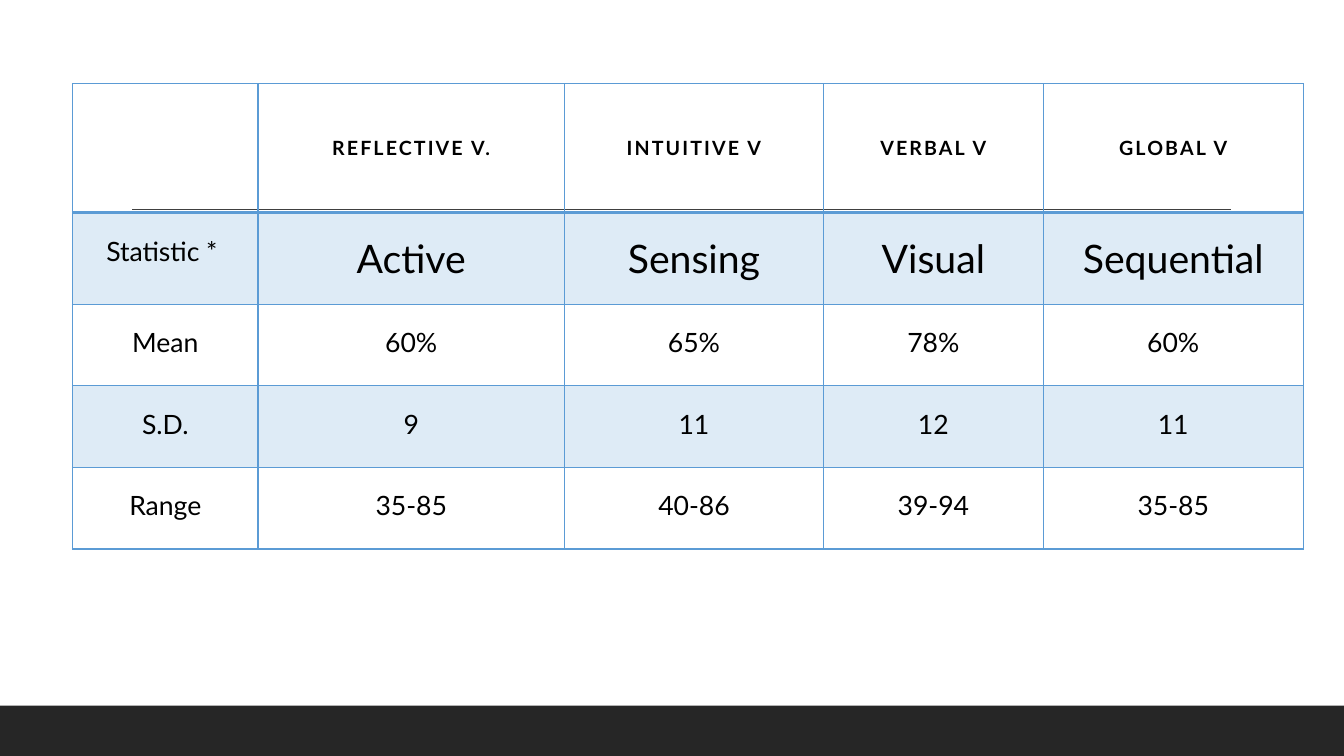
from lxml.etree import SubElement
from pptx import Presentation
from pptx.dml.color import RGBColor as RGB
from pptx.enum.shapes import MSO_CONNECTOR as LINE, MSO_SHAPE as SHAPE
from pptx.enum.text import MSO_ANCHOR as ANCHOR, PP_ALIGN as ALIGN
from pptx.oxml.ns import qn
from pptx.util import Inches, Pt

BLACK = RGB(0x00, 0x00, 0x00)
CHARCOAL = RGB(0x26, 0x26, 0x26)
GRAY = RGB(0x40, 0x40, 0x40)
BLUE = RGB(0x5B, 0x9B, 0xD5)

HEADER = {"size": Pt(14), "bold": True}
STYLE = {"size": Pt(28), "bold": False}
FIGURE = {"size": Pt(19), "bold": False}

COL_WIDTHS = [13.8, 22.8, 19.28, 16.35, 19.35]
ROW_HEIGHTS = [17.07] + [10.8] * 4
ROWS = [
    ["", "REFLECTIVE V.", "INTUITIVE V", "VERBAL V", "GLOBAL V"],
    ["Statistic * ", "Active", "Sensing", "Visual", "Sequential"],
    ["Mean", "60%", "65%", "78%", "60%"],
    ["S.D.", "9", "11", "12", "11"],
    ["Range", "35-85", "40-86", "39-94", "35-85"],
]


class Deck:
    """Places elements on one slide; lengths are percentages of its size."""

    font = "Lato"
    inset = Inches(0.22)
    tint = 20  # opacity of the banded rows, in percent

    def __init__(self):
        self.prs = Presentation()
        self.prs.slide_width, self.prs.slide_height = Inches(13.33), Inches(7.5)
        self.s = self.prs.slides.add_slide(self.prs.slide_layouts[6])

    def x(self, share):
        return round(self.prs.slide_width * share / 100)

    def y(self, share):
        return round(self.prs.slide_height * share / 100)

    def rule(self, left, right, top, color, weight):
        line = self.s.shapes.add_connector(
            LINE.STRAIGHT, self.x(left), self.y(top), self.x(right), self.y(top))
        line.line.color.rgb = color
        line.line.width = Pt(weight)
        SubElement(line._element.spPr, qn("a:effectLst"))

    def band(self, left, top, width, height, color):
        sp = self.s.shapes.add_shape(
            SHAPE.RECTANGLE, self.x(left), self.y(top), self.x(width), self.y(height))
        sp.shadow.inherit = False
        sp.fill.solid()
        sp.fill.fore_color.rgb = color
        sp.line.fill.background()

    def table(self, left, top, widths, heights, rows):
        table = self.s.shapes.add_table(
            len(rows), len(widths), self.x(left), self.y(top),
            self.x(sum(widths)), self.y(sum(heights))).table
        table.first_row = table.horz_banding = False
        for col, width in zip(table.columns, widths):
            col.width = self.x(width)
        for row, height in zip(table.rows, heights):
            row.height = self.y(height)
        for i, texts in enumerate(rows):
            for j, text in enumerate(texts):
                cell = table.cell(i, j)
                self.borders(cell, top=2 if i == 1 else 1, bottom=2 if i == 0 else 1)
                self.cell_fill(cell, banded=i % 2 == 1)
                style = HEADER if i == 0 else STYLE if i == 1 and j else FIGURE
                self.cell_text(cell, text, style, header=i == 0)

    def borders(self, cell, top, bottom):
        tcPr = cell._tc.get_or_add_tcPr()
        for side, weight in {"L": 1, "R": 1, "T": top, "B": bottom}.items():
            ln = SubElement(tcPr, qn(f"a:ln{side}"), w=str(Pt(weight)))
            fill = SubElement(ln, qn("a:solidFill"))
            SubElement(fill, qn("a:srgbClr"), val=str(BLUE))

    def cell_fill(self, cell, banded):
        if not banded:
            cell.fill.background()
            return
        cell.fill.solid()
        cell.fill.fore_color.rgb = BLUE
        color = cell._tc.tcPr.find(qn("a:solidFill")).find(qn("a:srgbClr"))
        SubElement(color, qn("a:alpha"), val=str(self.tint * 1000))

    def cell_text(self, cell, text, style, header):
        for side in ("left", "right", "top", "bottom"):
            setattr(cell, f"margin_{side}", self.inset)
        cell.vertical_anchor = ANCHOR.MIDDLE if header else ANCHOR.TOP
        if not text:
            return
        p = cell.text_frame.paragraphs[0]
        p.alignment = ALIGN.CENTER
        r = p.add_run()
        r.text = text
        for name, value in {"name": self.font, **style}.items():
            setattr(r.font, name, value)
        r.font.color.rgb = BLACK
        if header:
            r._r.get_or_add_rPr().set("spc", "150")


def main():
    deck = Deck()
    deck.rule(9.83, 91.6, 27.73, GRAY, 1)
    deck.band(0, 93.33, 100, 6.67, CHARCOAL)
    deck.table(5.4, 11.07, COL_WIDTHS, ROW_HEIGHTS, ROWS)
    deck.prs.save("out.pptx")


if __name__ == "__main__":
    main()
